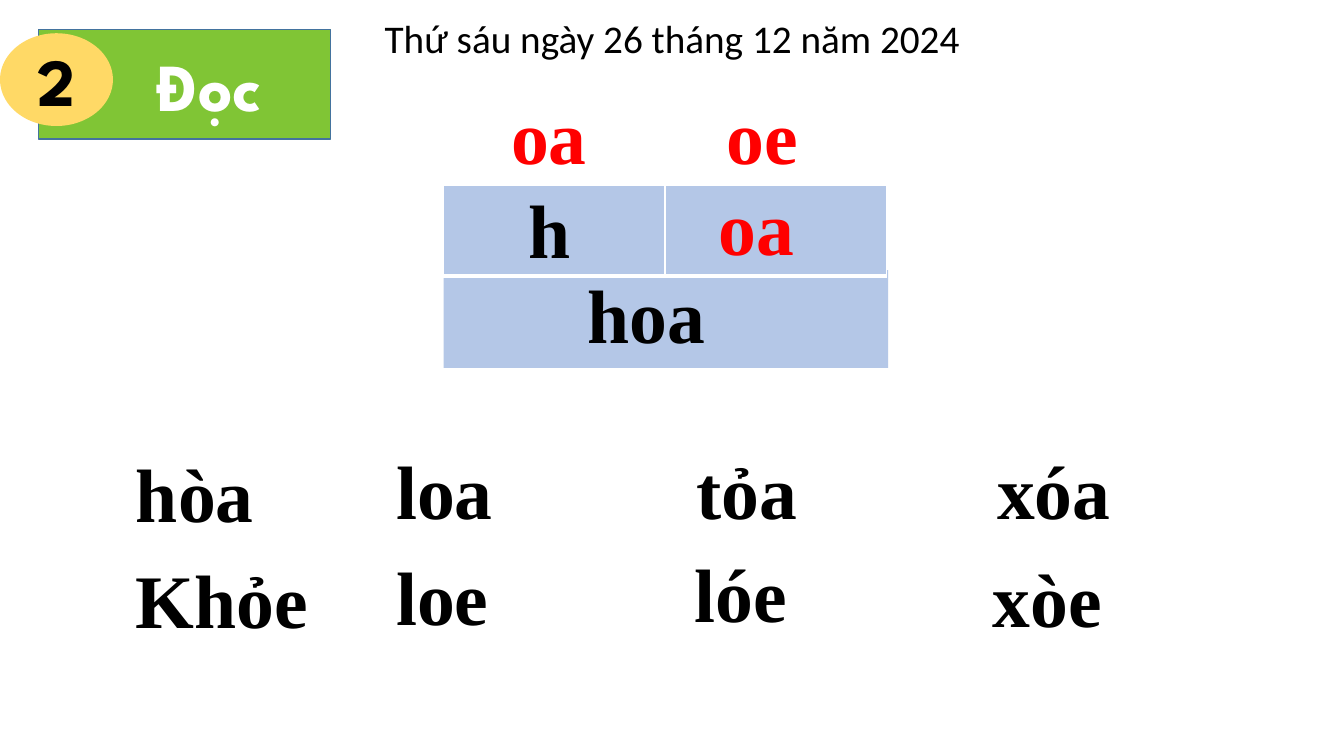
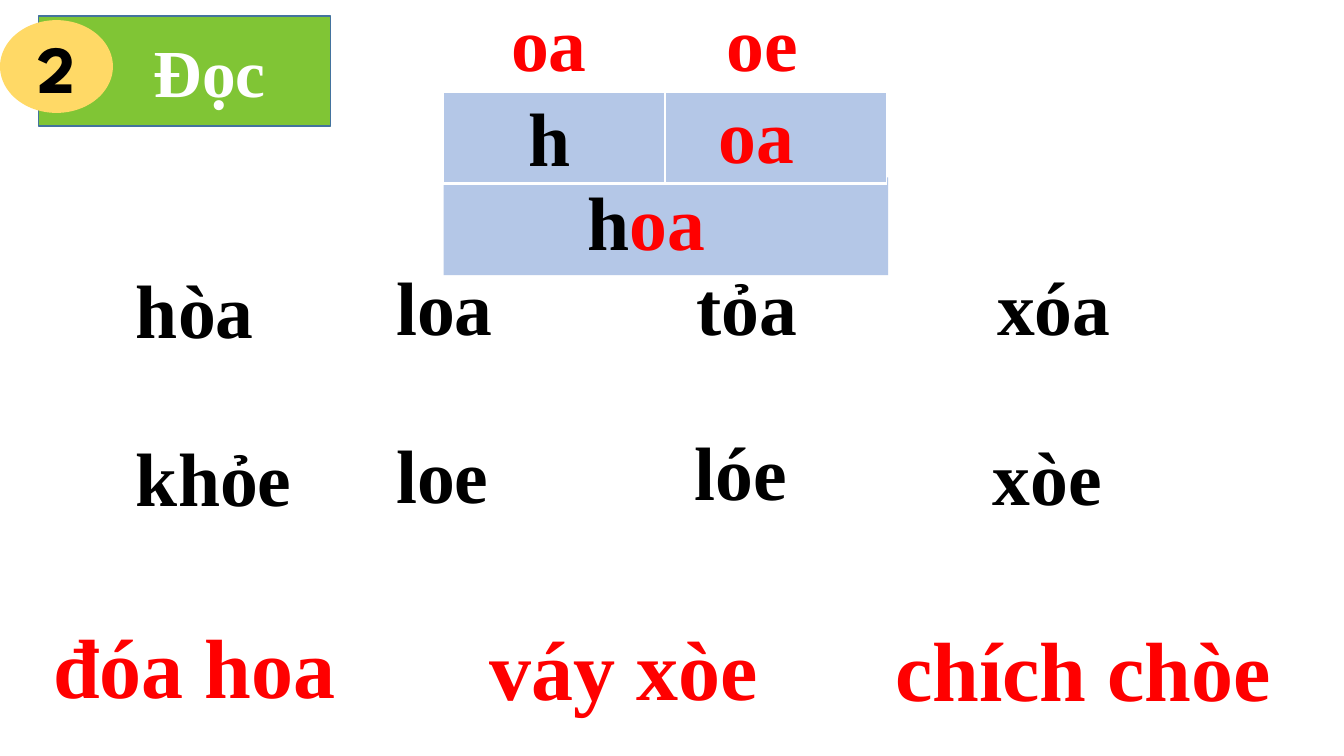
from dataclasses import dataclass

from lxml import etree
from pptx import Presentation
from pptx import util as u
from pptx.dml.color import RGBColor
from pptx.enum import shapes, text
from pptx.oxml import ns

PX = 9144  # EMU; 100 px to the inch
SERIF, ROUNDED, SANS = "Times New Roman", "League Spartan", "Calibri"
BLACK, WHITE, RED = "000000", "FFFFFF", "FF0000"
GREEN, GREEN_EDGE, YELLOW, BLUE = "80C535", "43739E", "FFD966", "B4C7E7"


@dataclass(frozen=True)
class Box:
    left: int
    top: int
    width: int
    height: int

    def emu(self) -> list[int]:
        return [v * PX for v in (self.left, self.top, self.width, self.height)]


@dataclass(frozen=True)
class Word:
    text: str
    left: int
    drop: int = 0  # px below the top of its row
    width: int = 258


@dataclass(frozen=True)
class Lesson:
    banner_top: int
    banner_font: str
    board_top: int
    blend_tail: str  # colour of the rhyme in the blended syllable
    row_tops: tuple[int, int]
    bright_word: str
    date: str = ""
    phrases: tuple[Word, ...] = ()


LESSONS = (
    Lesson(29, ROUNDED, 83, BLACK, (435, 538), "Khỏe",
           date="Thứ sáu ngày 26 tháng 12 năm 2024"),
    Lesson(16, SERIF, -9, RED, (253, 417), "khỏe",
           phrases=(Word("đóa hoa", 43, 0, 307), Word("váy xòe", 476, 2, 290),
                    Word("chích chòe", 878, 3, 409))),
)
PHRASES_TOP = 605
OA_WORDS = (Word("hòa", 125, 3), Word("loa", 383), Word("tỏa", 681), Word("xóa", 979))
OE_WORDS = (Word("loe", 383, 3), Word("lóe", 679), Word("xòe", 975, 5))


# Shared helpers
def rgb(colour: str) -> RGBColor:
    return RGBColor.from_string(colour)


def write(frame, content: str, *, size: int = 54, font: str = SERIF,
          colour: str = BLACK, bold: bool = True, centred: bool = False) -> None:
    """Append one formatted run to the first paragraph of a frame."""
    paragraph = frame.paragraphs[0]
    paragraph.alignment = text.PP_ALIGN.CENTER if centred else text.PP_ALIGN.LEFT
    run = paragraph.add_run()
    run.text = content
    run.font.size, run.font.name, run.font.bold = u.Pt(size), font, bold
    run.font.color.rgb = rgb(colour)


def add_text(slide, content: str, box: Box, **style):
    frame = slide.shapes.add_textbox(*box.emu()).text_frame
    frame.word_wrap = True
    write(frame, content, **style)
    return frame


def add_plain(slide, kind, box: Box, fill: str):
    shape = slide.shapes.add_shape(kind, *box.emu())
    shape.shadow.inherit = False
    shape.fill.solid()
    shape.fill.fore_color.rgb = rgb(fill)
    shape.line.fill.background()
    return shape


def add_words(slide, words: tuple[Word, ...], top: int, **style) -> None:
    for word in words:
        add_text(slide, word.text, Box(word.left, top + word.drop, word.width, 101), **style)


def set_border(cell, side: str, points: int) -> None:
    line = etree.SubElement(cell._tc.get_or_add_tcPr(), ns.qn(f"a:{side}"),
                            w=str(u.Pt(points)))
    fill = etree.SubElement(line, ns.qn("a:solidFill"))
    etree.SubElement(fill, ns.qn("a:srgbClr"), val=WHITE)


# Parts of a lesson slide
def draw_banner(slide, top: int, font: str) -> None:
    title = slide.shapes.title
    title.left, title.top, title.width, title.height = Box(38, top, 290, 109).emu()
    outline = etree.SubElement(title._element.spPr, ns.qn("a:prstGeom"), prst="roundRect")
    etree.SubElement(outline, ns.qn("a:avLst"))
    title.fill.solid()
    title.fill.fore_color.rgb = rgb(GREEN)
    title.line.color.rgb = rgb(GREEN_EDGE)
    title.line.width = u.Pt(1)
    frame = title.text_frame
    frame.auto_size = text.MSO_AUTO_SIZE.NONE
    frame.vertical_anchor = text.MSO_ANCHOR.MIDDLE
    frame.margin_left = 60 * PX
    write(frame, "Đọc", size=48, font=font, colour=WHITE, centred=True)

    number = add_plain(slide, shapes.MSO_SHAPE.OVAL, Box(0, top + 4, 112, 92), YELLOW)
    number.text_frame.vertical_anchor = text.MSO_ANCHOR.MIDDLE
    write(number.text_frame, "2", size=48, font=ROUNDED, centred=True)


def draw_board(slide, top: int, blend_tail: str) -> None:
    # Rhymes of the day
    add_text(slide, "oa", Box(497, top, 169, 101), colour=RED)
    add_text(slide, "oe", Box(711, top, 169, 101), colour=RED)

    # Syllable box under the two-part table
    add_plain(slide, shapes.MSO_SHAPE.RECTANGLE, Box(440, top + 185, 441, 97), BLUE)
    parts = slide.shapes.add_table(1, 2, *Box(440, top + 101, 439, 90).emu()).table
    for cell in parts.iter_cells():
        for side, points in (("lnL", 1), ("lnR", 1), ("lnT", 1), ("lnB", 3)):
            set_border(cell, side, points)
        cell.fill.solid()
        cell.fill.fore_color.rgb = rgb(BLUE)

    add_text(slide, "h", Box(514, top + 94, 177, 104))
    add_text(slide, "oa", Box(703, top + 91, 177, 104), colour=RED)
    blend = add_text(slide, "h", Box(573, top + 178, 215, 104))
    write(blend, "oa", colour=blend_tail)


def draw_lesson(slide, lesson: Lesson) -> None:
    draw_banner(slide, lesson.banner_top, lesson.banner_font)
    draw_board(slide, lesson.board_top, lesson.blend_tail)
    oa_top, oe_top = lesson.row_tops
    add_words(slide, OA_WORDS, oa_top)
    add_words(slide, (Word(lesson.bright_word, 125, 6), *OE_WORDS), oe_top)
    add_words(slide, lesson.phrases, PHRASES_TOP, size=60, colour=RED)
    if lesson.date:
        add_text(slide, lesson.date, Box(361, 9, 611, 57), size=28, font=SANS,
                 bold=False, centred=True)


def main() -> None:
    deck = Presentation()
    deck.slide_width, deck.slide_height = 1333 * PX, 750 * PX
    title_only = deck.slide_layouts[5]
    for lesson in LESSONS:
        draw_lesson(deck.slides.add_slide(title_only), lesson)
    deck.save("out.pptx")


if __name__ == "__main__":
    main()
